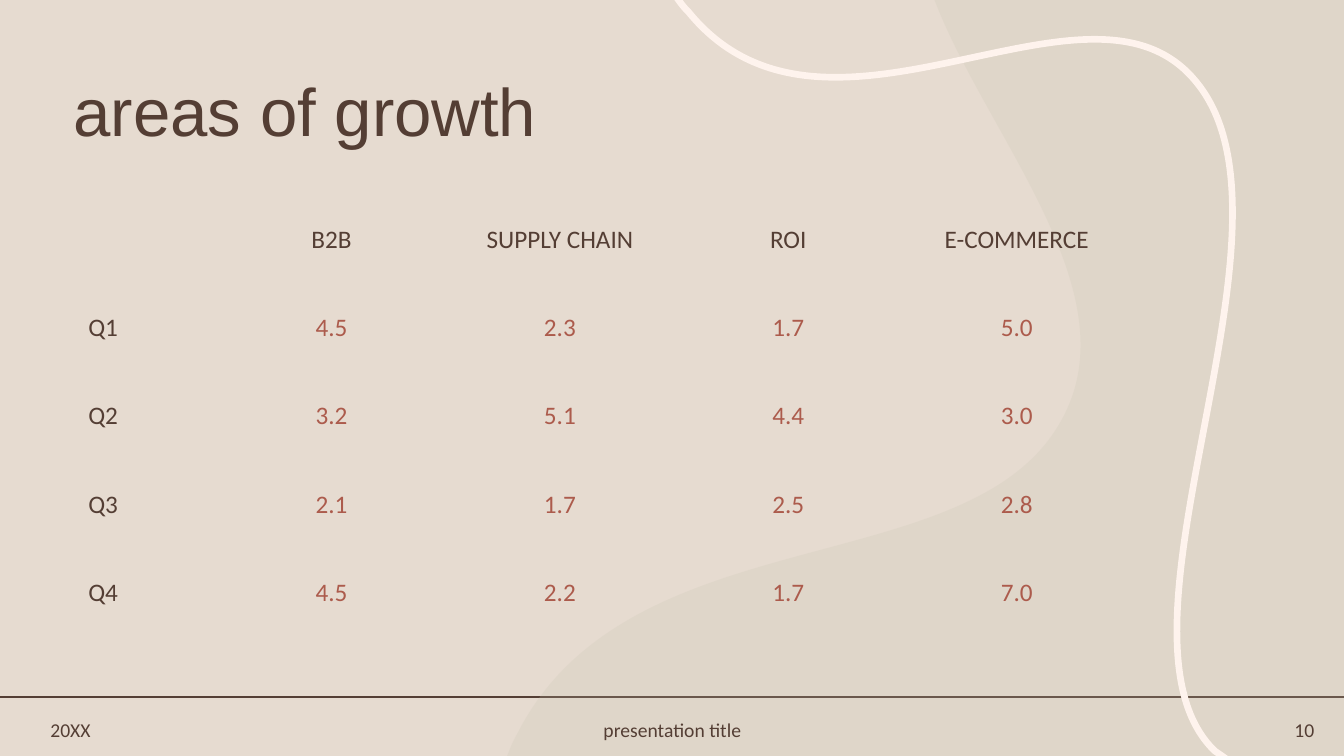
from lxml import etree
from pptx import Presentation
from pptx.dml.color import RGBColor
from pptx.enum import shapes, text
from pptx.oxml import ns
from pptx.util import Cm, Pt

BROWN = RGBColor(0x54, 0x3E, 0x34)
RUST = RGBColor(0xAC, 0x5B, 0x4C)
SAND = RGBColor(0xE6, 0xDB, 0xD0)
SAGE = RGBColor(0xC6, 0xC4, 0xAF)
CREAM = RGBColor(0xFE, 0xF3, 0xED)
NO_GRID_STYLE = "{2D5ABB26-0587-4C30-8999-92F81FD0307C}"

TITLE = "areas of growth"
ROWS = [
    ["", "B2B", "SUPPLY CHAIN", "ROI", "E-COMMERCE"],
    ["Q1", "4.5", "2.3", "1.7", "5.0"],
    ["Q2", "3.2", "5.1", "4.4", "3.0"],
    ["Q3", "2.1", "1.7", "2.5", "2.8"],
    ["Q4", "4.5", "2.2", "1.7", "7.0"],
]
# Text, left, width, alignment
FOOTERS = [
    ("20XX", 1.02, 2.74, text.PP_ALIGN.LEFT),
    ("presentation title", 12.17, 9.55, text.PP_ALIGN.CENTER),
    ("10", 30.63, 2.74, text.PP_ALIGN.RIGHT),
]
# Outlines in cm: each step is one point for a straight line,
# or two control points and an end point for a Bezier curve
WAVE = [
    [(23.55, 0)], [(33.87, 0)], [(33.87, 19.05)], [(12.78, 19.05)], [(12.88, 18.8)],
    [(12.98, 18.57), (13.08, 18.42), (13.13, 18.31)],
    [(16.03, 13), (24.43, 14.68), (26.72, 10.64)],
    [(28.52, 7.52), (25.1, 3.71), (23.67, 0.3)],
]
RIBBON = [
    [(30.91, 19.13)], [(30.84, 19.08)], [(30.61, 18.92)],
    [(27.53, 15.93), (33.2, 5.59), (30.1, 2.01)],
    [(27.38, -1.19), (20.83, 4.57), (17.35, 0.3)],
    [(17.27, 0.23), (17.17, 0.1), (17.04, -0.08)],
]
WIDTH, HEIGHT = 33.87, 19.05
TABLE_LEFT, TABLE_TOP, TABLE_WIDTH, ROW_HEIGHT = -0.28, 4.94, 28.78, 2.22
RULE_TOP, FOOTER_TOP, FOOTER_HEIGHT = 17.56, 17.96, 0.86


def add_outline(slide, outline, close):
    """Build the outline through its end points, then bend the curved steps."""
    first, *rest = [(Cm(step[-1][0]), Cm(step[-1][1])) for step in outline]
    builder = slide.shapes.build_freeform(*first)
    builder.add_line_segments(rest, close=close)
    shape = builder.convert_to_shape()
    shape.shadow.inherit = False
    lines = list(shape._element.iter(ns.qn("a:lnTo")))
    for line, step in zip(lines, outline[1:]):
        if len(step) == 1:
            continue
        curve = etree.Element(ns.qn("a:cubicBezTo"))
        for x, y in step:
            etree.SubElement(curve, ns.qn("a:pt"),
                             x=str(Cm(x) - shape.left), y=str(Cm(y) - shape.top))
        line.getparent().replace(line, curve)
    return shape


def format_paragraph(paragraph, size, color, alignment, font="Calibri"):
    paragraph.alignment = alignment
    for run in paragraph.runs:
        run.font.size = Pt(size)
        run.font.name = font
        run.font.bold = False
        run.font.color.rgb = color


def add_background(slide):
    slide.background.fill.solid()
    slide.background.fill.fore_color.rgb = SAND

    rule = slide.shapes.add_connector(
        shapes.MSO_CONNECTOR.STRAIGHT, 0, Cm(RULE_TOP), Cm(WIDTH), Cm(RULE_TOP))
    rule.line.color.rgb = BROWN
    rule.line.width = Pt(1.25)
    etree.SubElement(rule._element.spPr, ns.qn("a:effectLst"))

    wave = add_outline(slide, WAVE, close=True)
    wave.fill.solid()
    wave.fill.fore_color.rgb = SAGE
    wave.line.fill.background()
    color = wave._element.spPr.find(".//" + ns.qn("a:srgbClr"))
    etree.SubElement(color, ns.qn("a:alpha"), val="20000")

    ribbon = add_outline(slide, RIBBON, close=False)
    ribbon.fill.background()
    ribbon.line.color.rgb = CREAM
    ribbon.line.width = Pt(4.75)


def add_title(slide):
    title = slide.shapes.title
    title.left, title.top, title.width, title.height = Cm(1.6), Cm(1.96), Cm(29.21), Cm(1.88)
    frame = title.text_frame
    frame.text = TITLE
    frame.auto_size = text.MSO_AUTO_SIZE.NONE
    frame.vertical_anchor = text.MSO_ANCHOR.MIDDLE
    frame.paragraphs[0].line_spacing = 0.9
    format_paragraph(frame.paragraphs[0], 48, BROWN, text.PP_ALIGN.LEFT, "Arial")
    slide.shapes._spTree.append(title._element)  # in front of the background


def add_growth_table(slide):
    row_count, column_count = len(ROWS), len(ROWS[0])
    frame = slide.shapes.add_table(
        row_count, column_count, Cm(TABLE_LEFT), Cm(TABLE_TOP),
        Cm(TABLE_WIDTH), Cm(ROW_HEIGHT * row_count))
    table = frame.table
    table.first_row = table.horz_banding = False
    table._tbl.tblPr.find(ns.qn("a:tableStyleId")).text = NO_GRID_STYLE
    for row_index, row in enumerate(ROWS):
        for column_index, value in enumerate(row):
            cell = table.cell(row_index, column_index)
            cell.text = value
            cell.fill.background()
            cell.vertical_anchor = text.MSO_ANCHOR.MIDDLE
            color = RUST if row_index and column_index else BROWN
            format_paragraph(cell.text_frame.paragraphs[0], 18, color, text.PP_ALIGN.CENTER)


def add_footers(slide):
    for label, left, width, alignment in FOOTERS:
        box = slide.shapes.add_textbox(Cm(left), Cm(FOOTER_TOP), Cm(width), Cm(FOOTER_HEIGHT))
        frame = box.text_frame
        frame.text = label
        frame.word_wrap = True
        frame.vertical_anchor = text.MSO_ANCHOR.MIDDLE
        format_paragraph(frame.paragraphs[0], 14, BROWN, alignment)


def main():
    presentation = Presentation()
    presentation.slide_width, presentation.slide_height = Cm(WIDTH), Cm(HEIGHT)
    slide = presentation.slides.add_slide(presentation.slide_layouts.get_by_name("Title Only"))
    add_background(slide)
    add_title(slide)
    add_growth_table(slide)
    add_footers(slide)
    presentation.save("out.pptx")


if __name__ == "__main__":
    main()
